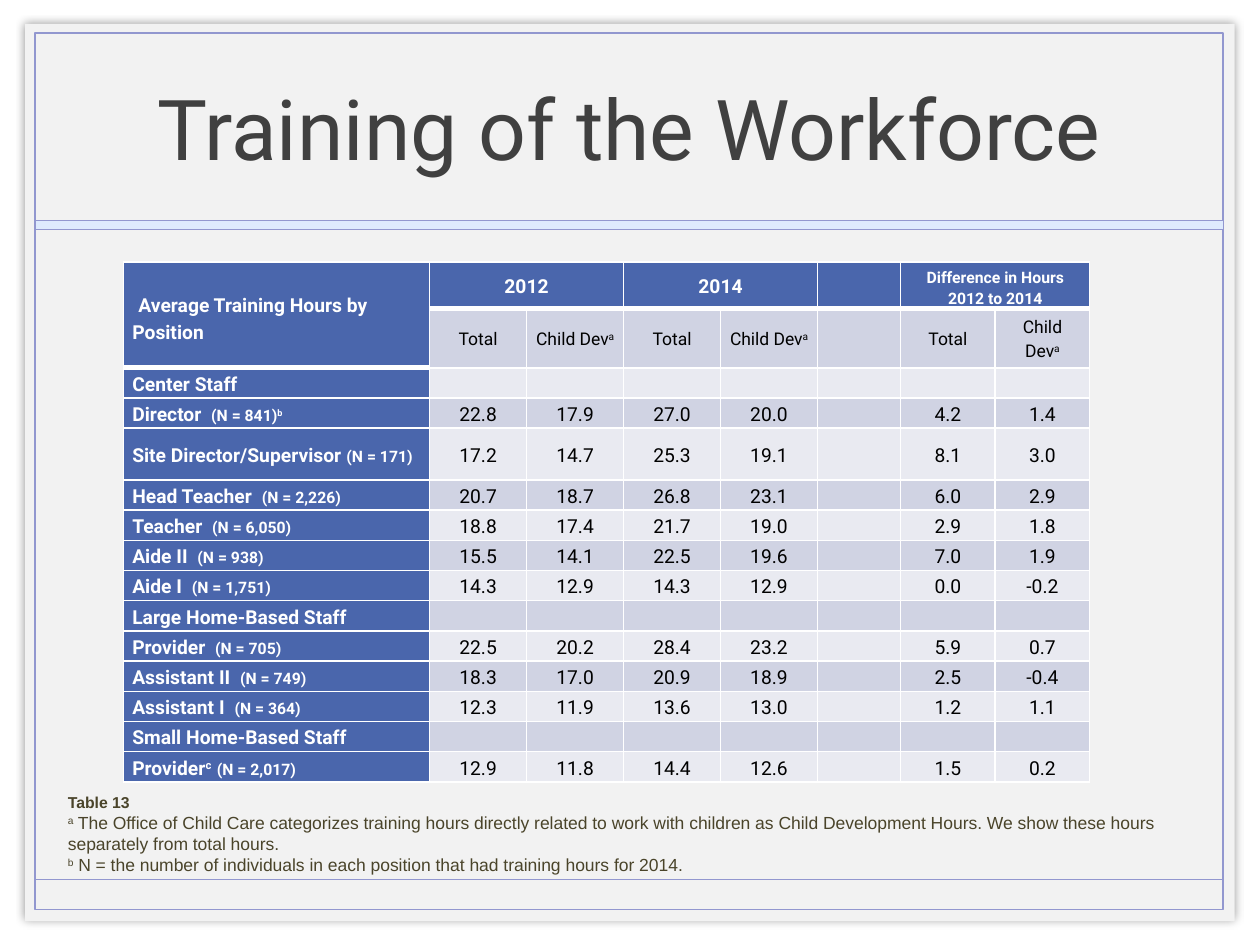
"""Build the slide on training hours of the child care workforce."""
from lxml.etree import SubElement
from pptx import Presentation
from pptx.dml.color import RGBColor
from pptx.enum.shapes import MSO_CONNECTOR, MSO_SHAPE
from pptx.enum.text import MSO_ANCHOR, MSO_AUTO_SIZE, PP_ALIGN
from pptx.oxml.ns import qn
from pptx.util import Inches, Pt

WHITE = RGBColor(0xFF, 0xFF, 0xFF)
BLACK = RGBColor(0x00, 0x00, 0x00)
PAPER = RGBColor(0xF2, 0xF2, 0xF2)
LAVENDER = RGBColor(0x92, 0x97, 0xCF)
PALE_BLUE = RGBColor(0xDE, 0xEA, 0xFD)
CHARCOAL = RGBColor(0x40, 0x40, 0x40)
OLIVE = RGBColor(0x4A, 0x44, 0x2A)
HEADER_BLUE = RGBColor(0x4A, 0x66, 0xAC)
BANDS = RGBColor(0xE9, 0xEA, 0xF1), RGBColor(0xD0, 0xD3, 0xE3)

COLUMN_WIDTHS = [2.43] + [0.77] * 4 + [0.66, 0.75, 0.75]
ROW_HEIGHTS = [0.37, 0.41, 0.24, 0.24, 0.41] + [0.24] * 10
STAFF_ROWS = [
    ("Center Staff", "", "", ""),
    ("Director  ", "", "(N = 841)", "22.8 17.9 27.0 20.0 4.2 1.4"),
    ("Site Director/Supervisor ", "", "(N = 171)", "17.2 14.7 25.3 19.1 8.1 3.0"),
    ("Head Teacher  ", "", "(N = 2,226)", "20.7 18.7 26.8 23.1 6.0 2.9"),
    ("Teacher  ", "", "(N = 6,050)", "18.8 17.4 21.7 19.0 2.9 1.8"),
    ("Aide II  ", "", "(N = 938)", "15.5 14.1 22.5 19.6 7.0 1.9"),
    ("Aide I  ", "", "(N = 1,751)", "14.3 12.9 14.3 12.9 0.0 -0.2"),
    ("Large Home-Based Staff", "", "", ""),
    ("Provider  ", "", "(N = 705)", "22.5 20.2 28.4 23.2 5.9 0.7"),
    ("Assistant II  ", "", "(N = 749)", "18.3 17.0 20.9 18.9 2.5 -0.4"),
    ("Assistant I  ", "", "(N = 364)", "12.3 11.9 13.6 13.0 1.2 1.1"),
    ("Small Home-Based Staff", "", "", ""),
    ("Provider", "c  ", "(N = 2,017)", "12.9 11.8 14.4 12.6 1.5 0.2"),
]
VALUE_COLUMNS = (1, 2, 3, 4, 6, 7)


def add_text(para, text, size=11, font="Roboto", color=BLACK, bold=False, raised=False):
    """Add one formatted run to a paragraph."""
    if text:
        span = para.add_run()
        span.text = text
        span.font.size = Pt(size)
        span.font.name = font
        span.font.color.rgb = color
        span.font.bold = bold
        if raised:
            span.font._element.set("baseline", "30000")


deck = Presentation()
deck.slide_width, deck.slide_height = Inches(10), Inches(7.5)
slide = deck.slides.add_slide(deck.slide_layouts[5])
shapes = slide.shapes

FRAME_PARTS = [
    ((0.2, 0.19, 9.6, 7.12), PAPER, None),
    ((0.28, 0.26, 9.43, 6.96), None, 1),
    ((0.28, 1.75, 9.43, 0.07), PALE_BLUE, 0.25),
]
for place, fill, line_width in FRAME_PARTS:
    part = shapes.add_shape(MSO_SHAPE.RECTANGLE, *map(Inches, place))
    part.shadow.inherit = False
    if fill is None:
        part.fill.background()
    else:
        part.fill.solid()
        part.fill.fore_color.rgb = fill
    if line_width is None:
        part.line.fill.background()
        effects = part._element.spPr.find(qn("a:effectLst"))
        shadow = SubElement(effects, qn("a:outerShdw"), blurRad=str(Pt(5)), dist="0",
                            algn="ctr", rotWithShape="0")
        shade = SubElement(shadow, qn("a:srgbClr"), val=str(BLACK))
        SubElement(shade, qn("a:alpha"), val="40000")
    else:
        part.line.color.rgb = LAVENDER
        part.line.width = Pt(line_width)

footer_line = shapes.add_connector(
    MSO_CONNECTOR.STRAIGHT, Inches(0.28), Inches(6.98), Inches(9.71), Inches(6.98))
footer_line.line.color.rgb = LAVENDER
footer_line.line.width = Pt(1)
SubElement(footer_line._element.spPr, qn("a:effectLst"))

title = shapes.title
shapes.element.append(title.element)
title.left, title.top, title.width, title.height = map(Inches, (0.98, 0.27, 8.03, 1.47))
title.text_frame.auto_size = MSO_AUTO_SIZE.NONE
title.text_frame.vertical_anchor = MSO_ANCHOR.MIDDLE
title_para = title.text_frame.paragraphs[0]
title_para.alignment = PP_ALIGN.CENTER
add_text(title_para, "Training of the Workforce", size=48, color=CHARCOAL)

table = shapes.add_table(
    len(ROW_HEIGHTS), len(COLUMN_WIDTHS), Inches(0.98), Inches(2.08),
    Inches(sum(COLUMN_WIDTHS)), Inches(sum(ROW_HEIGHTS))).table
table.first_row = table.horz_banding = False
for column, width in zip(table.columns, COLUMN_WIDTHS):
    column.width = Inches(width)
for row, height in zip(table.rows, ROW_HEIGHTS):
    row.height = Inches(height)

for row in range(len(ROW_HEIGHTS)):
    for col in range(len(COLUMN_WIDTHS)):
        cell = table.cell(row, col)
        cell.margin_left = cell.margin_right = Inches(0.07)
        cell.margin_top = cell.margin_bottom = 0
        cell.vertical_anchor = MSO_ANCHOR.MIDDLE
        is_header = row == 0 or col == 0
        header_end = 2 if col == 0 else 1
        widths = {"L": 1, "R": 1, "T": 3 if row == header_end else 1,
                  "B": 3 if row < header_end else 1}
        for side, width in widths.items():
            border = SubElement(cell._tc.get_or_add_tcPr(), qn(f"a:ln{side}"), w=str(Pt(width)))
            SubElement(SubElement(border, qn("a:solidFill")), qn("a:srgbClr"), val=str(WHITE))
        cell.fill.solid()
        cell.fill.fore_color.rgb = HEADER_BLUE if is_header else BANDS[row % 2]
        para = cell.text_frame.paragraphs[0]
        para.line_spacing = 1.15
        para.alignment = PP_ALIGN.LEFT if col == 0 else PP_ALIGN.CENTER
        para._p.get_or_add_endParaRPr().set("sz", "900")

table.cell(0, 0).merge(table.cell(1, 0))
for col in (1, 3, 6):
    table.cell(0, col).merge(table.cell(0, col + 1))

corner = table.cell(0, 0).text_frame.paragraphs[0]
add_text(corner, " ", size=14, color=WHITE, bold=True)
add_text(corner, "Average Training Hours by Position", color=WHITE, bold=True)
for col, year in ((1, "2012"), (3, "2014")):
    add_text(table.cell(0, col).text_frame.paragraphs[0], year, color=WHITE, bold=True)

difference = table.cell(0, 6)
difference.vertical_anchor = MSO_ANCHOR.BOTTOM
second_line = difference.text_frame.add_paragraph()
second_line.line_spacing = 1.15
second_line.alignment = PP_ALIGN.CENTER
for para, text in zip(difference.text_frame.paragraphs, ("Difference in Hours", "2012 to 2014")):
    add_text(para, text, size=9, color=WHITE, bold=True)

for col in (1, 3, 6):
    add_text(table.cell(1, col).text_frame.paragraphs[0], "Total", size=10)
    child_para = table.cell(1, col + 1).text_frame.paragraphs[0]
    add_text(child_para, "Child Dev", size=10)
    add_text(child_para, "a", size=10, raised=True)

for row, (position, mark, count, hours) in enumerate(STAFF_ROWS, start=2):
    label = table.cell(row, 0).text_frame.paragraphs[0]
    add_text(label, position, color=WHITE, bold=True)
    add_text(label, mark, color=WHITE, bold=True, raised=True)
    add_text(label, count, size=9, color=WHITE, bold=True)
    if position.startswith("Director"):
        add_text(label, "b", size=9, color=WHITE, bold=True, raised=True)
    for col, value in zip(VALUE_COLUMNS, hours.split()):
        add_text(table.cell(row, col).text_frame.paragraphs[0], value)

notes_box = shapes.add_textbox(Inches(0.44), Inches(6.24), Inches(9.05), Inches(0.76))
notes = notes_box.text_frame
notes.word_wrap = True
notes.auto_size = MSO_AUTO_SIZE.SHAPE_TO_FIT_TEXT
notes.vertical_anchor = MSO_ANCHOR.MIDDLE
add_text(notes.paragraphs[0], "Table 13", size=9, font="Arial", color=OLIVE, bold=True)
FOOTNOTES = [
    ("a", " The Office of Child Care categorizes training hours directly related to work with "
          "children as Child Development Hours. We show these hours separately from total hours."),
    ("b", " N = the number of individuals in each position that had training hours for 2014."),
]
for mark, text in FOOTNOTES:
    para = notes.add_paragraph()
    add_text(para, mark, size=10, font="Arial", color=OLIVE, raised=True)
    add_text(para, text, size=10, font="Arial", color=OLIVE)

deck.save("out.pptx")
